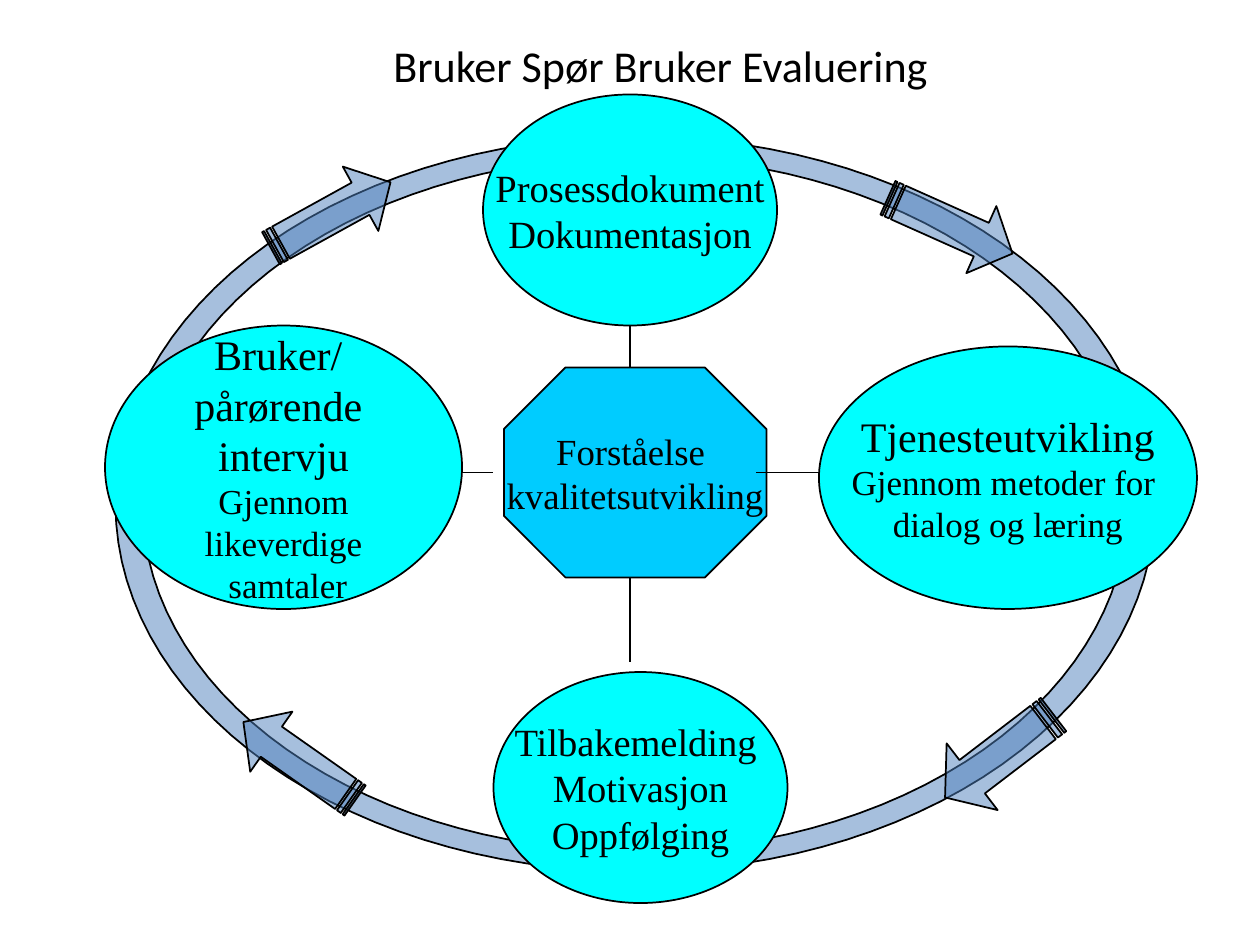
import math

from lxml import etree
from pptx import Presentation
from pptx import util as u
from pptx.dml.color import RGBColor
from pptx.enum import shapes, text
from pptx.oxml.ns import qn

Pt = u.Pt
BLACK, CYAN, SKY, STEEL = "000000", "00FFFF", "00CCFF", "4F81BD"


def color(hex_value):
    return RGBColor.from_string(hex_value)


class CycleSlide:
    def __init__(self, slide, serif="Times New Roman", sans="Calibri"):
        self.slide = slide
        self.serif = serif
        self.sans = sans
        self.line_width = Pt(1)

    def style(self, shape, fill, opacity=None):
        shape.shadow.inherit = False
        shape.fill.solid()
        shape.fill.fore_color.rgb = color(fill)
        shape.line.color.rgb = color(BLACK)
        shape.line.width = self.line_width
        if opacity is not None:
            fill_color = shape._element.spPr.find(qn("a:solidFill"))[0]
            alpha = etree.SubElement(fill_color, qn("a:alpha"))
            alpha.set("val", str(opacity * 1000))

    def title(self, wording, left, top, width, height):
        title = self.slide.shapes.title
        title.left, title.top = Pt(left), Pt(top)
        title.width, title.height = Pt(width), Pt(height)
        frame = title.text_frame
        frame.text = wording
        frame.auto_size = text.MSO_AUTO_SIZE.NONE
        frame.vertical_anchor = text.MSO_ANCHOR.MIDDLE
        self.format_paragraph(frame.paragraphs[0], self.sans, 25.2)

    def format_paragraph(self, paragraph, font_name, size):
        paragraph.alignment = text.PP_ALIGN.CENTER
        paragraph.font.name = font_name
        paragraph.font.size = Pt(size)
        paragraph.font.color.rgb = color(BLACK)

    def preset(self, kind, left, top, width, height):
        return self.slide.shapes.add_shape(
            kind, Pt(left), Pt(top), Pt(width), Pt(height))

    def node(self, kind, box, fill, lines):
        """Add a labelled shape; lines holds (wording, size) pairs."""
        node = self.preset(kind, *box)
        self.style(node, fill)
        frame = node.text_frame
        frame.word_wrap = False
        frame.vertical_anchor = text.MSO_ANCHOR.MIDDLE
        for index, (wording, size) in enumerate(lines):
            paragraph = frame.add_paragraph() if index else frame.paragraphs[0]
            paragraph.text = wording
            self.format_paragraph(paragraph, self.serif, size)
        return node

    def ring(self, left, top, width, height, side, cap, steps=120):
        """Add an elliptical ring, side thick left and right, cap thick above and below."""
        center_x, center_y = left + width / 2, top + height / 2

        def ellipse(radius_x, radius_y, direction):
            angles = [direction * 2 * math.pi * i / steps for i in range(steps)]
            return [(Pt(center_x + radius_x * math.cos(a)),
                     Pt(center_y + radius_y * math.sin(a))) for a in angles]

        outer = ellipse(width / 2, height / 2, 1)
        inner = ellipse(width / 2 - side, height / 2 - cap, -1)
        builder = self.slide.shapes.build_freeform(*outer[0])
        builder.add_line_segments(outer[1:], close=True)
        builder.move_to(*inner[0])
        builder.add_line_segments(inner[1:], close=True)
        self.style(builder.convert_to_shape(), STEEL, opacity=50)

    def spoke(self, x1, y1, x2, y2):
        spoke = self.slide.shapes.add_connector(
            shapes.MSO_CONNECTOR.STRAIGHT, Pt(x1), Pt(y1), Pt(x2), Pt(y2))
        spoke.line.color.rgb = color(BLACK)
        spoke.line.width = self.line_width
        etree.SubElement(spoke._element.spPr, qn("a:effectLst"))

    def arrow(self, left, top, width, height, rotation):
        arrow = self.preset(shapes.MSO_SHAPE.STRIPED_RIGHT_ARROW,
                            left, top, width, height)
        arrow.adjustments[0] = 0.5
        arrow.adjustments[1] = width / height / 4
        arrow.rotation = rotation
        self.style(arrow, STEEL, opacity=50)


def main():
    deck = Presentation()
    deck.slide_width, deck.slide_height = Pt(720), Pt(540)
    cycle = CycleSlide(deck.slides.add_slide(deck.slide_layouts[5]))
    cycle.title("Bruker Spør Bruker Evaluering", 70.5, 20, 614, 34)

    center = cycle.node(
        shapes.MSO_SHAPE.OCTAGON, (288, 210, 150, 120), SKY,
        [("Forståelse ", 21), ("kvalitetsutvikling", 21)])
    center.adjustments[0] = 0.293

    cycle.ring(66, 78, 594, 420, side=15.4, cap=11.6)

    for ends in [(264, 270, 282, 270), (432, 270, 474, 270),
                 (360, 186, 360, 210), (360, 330, 360, 378)]:
        cycle.spoke(*ends)

    stages = [
        ((276, 54, 168, 132),
         [("Prosessdokument", 22), ("Dokumentasjon", 22)]),
        ((60, 186, 204, 162),
         [("Bruker/ ", 24), ("pårørende ", 24), ("intervju", 24),
          ("Gjennom", 20), ("likeverdige", 20), (" samtaler", 20)]),
        ((468, 198, 216, 150),
         [("Tjenesteutvikling", 24), ("Gjennom metoder for ", 20),
          ("dialog og læring", 20)]),
        ((282, 384, 168, 132),
         [("Tilbakemelding ", 22), ("Motivasjon", 22), ("Oppfølging", 22)]),
    ]
    for box, lines in stages:
        cycle.node(shapes.MSO_SHAPE.OVAL, box, CYAN, lines)

    for placement in [(504, 108, 78, 42, 24.1), (150, 102, 78, 42, 331.1),
                      (132, 414, 78, 42, 215.1), (532, 408, 78, 48, 142.6)]:
        cycle.arrow(*placement)

    deck.save("out.pptx")


if __name__ == "__main__":
    main()
